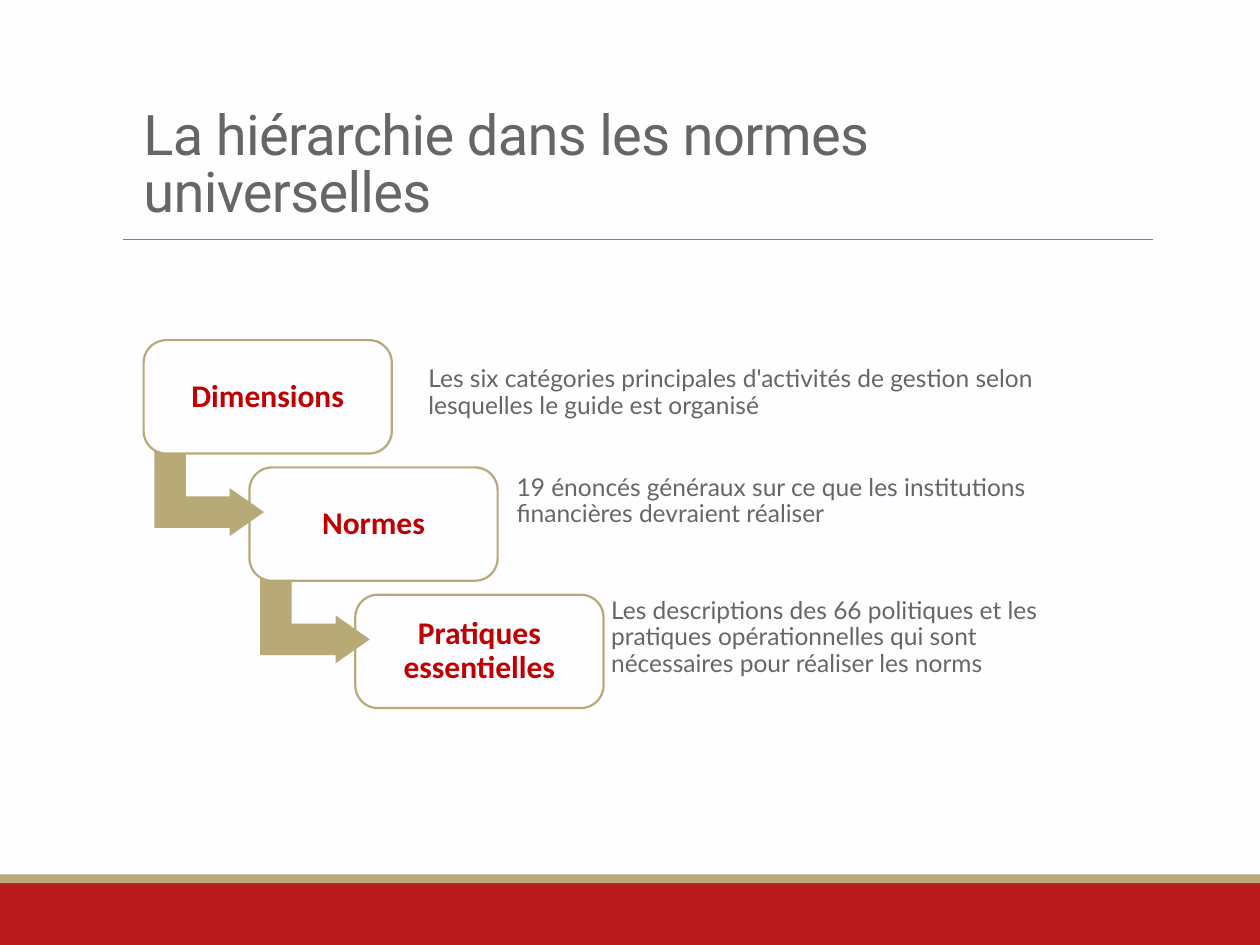
from dataclasses import dataclass

from pptx import Presentation
from pptx.dml.color import RGBColor
from pptx.enum.shapes import MSO_CONNECTOR, MSO_SHAPE
from pptx.enum.text import MSO_ANCHOR, PP_ALIGN
from pptx.oxml.ns import qn
from pptx.util import Inches, Pt


@dataclass(frozen=True)
class Theme:
    """Colours, fonts and type sizes of the slide."""
    background: str = "FEFDFF"
    red: str = "B91A1B"
    gold: str = "B8AA76"
    rule: str = "808080"
    text: str = "666666"
    label: str = "C00000"
    title_font: str = "Roboto"
    body_font: str = "Lato"
    label_font: str = "Calibri"
    title_size: int = 32
    body_size: int = 14
    label_size: int = 18


THEME = Theme()
STEP_LEFT, STEP_TOP = 1.14, 2.7
STEP_RIGHT, STEP_DOWN = 0.84, 1.01
STEPS = [
    ("Dimensions",
     "Les six catégories principales d'activités de gestion selon lesquelles le guide est organisé",
     (3.34, 2.71, 5.26, 0.82)),
    ("Normes",
     "19 énoncés généraux sur ce que les institutions financières devraient réaliser",
     (4.04, 3.57, 4.72, 0.82)),
    ("Pratiques essentielles",
     "Les descriptions des 66 politiques et les pratiques opérationnelles qui sont nécessaires pour réaliser les norms",
     (4.79, 4.5, 3.98, 1.12)),
]


def color(value):
    """Turn a theme colour into an RGB colour."""
    return RGBColor.from_string(value)


def write_text(shape, text, font, size, text_color, bold=False, margin=0.06,
               alignment=PP_ALIGN.LEFT, anchor=MSO_ANCHOR.MIDDLE, line_spacing=0.9):
    """Fill a shape with one formatted paragraph and return its run."""
    frame = shape.text_frame
    frame.text = text
    frame.word_wrap = True
    frame.vertical_anchor = anchor
    frame.margin_left = frame.margin_right = Inches(margin)
    frame.margin_top = frame.margin_bottom = Inches(min(margin, 0.06))
    paragraph = frame.paragraphs[0]
    paragraph.alignment = alignment
    paragraph.line_spacing = line_spacing
    run = paragraph.runs[0]
    run.font.name = font
    run.font.size = Pt(size)
    run.font.bold = bold
    run.font.color.rgb = color(text_color)
    return run


def add_solid(slide, kind, box, fill, line=None):
    """Add a filled preset shape, outlined when a line colour is given."""
    shape = slide.shapes.add_shape(kind, *map(Inches, box))
    shape.shadow.inherit = False
    shape.fill.solid()
    shape.fill.fore_color.rgb = color(fill)
    if line:
        shape.line.color.rgb = color(line)
        shape.line.width = Pt(1.25)
    else:
        shape.line.fill.background()
    return shape


def add_rule(slide, left, right, top):
    """Add the thin horizontal line under the title."""
    rule = slide.shapes.add_connector(
        MSO_CONNECTOR.STRAIGHT, Inches(left), Inches(top), Inches(right), Inches(top))
    rule.line.color.rgb = color(THEME.rule)
    rule.line.width = Pt(0.5)
    properties = rule._element.spPr
    properties.append(properties.makeelement(qn("a:effectLst"), {}))


def add_title(slide, text):
    """Add the slide title with slightly tightened letters."""
    title = slide.shapes.add_textbox(*map(Inches, (1.04, 0.9, 8.25, 0.94)))
    run = write_text(title, text, THEME.title_font, THEME.title_size, THEME.text,
                     margin=0.1, anchor=MSO_ANCHOR.BOTTOM, line_spacing=0.85)
    run.font._element.set("spc", "-40")


def add_description(slide, text, box):
    """Add the explanation beside a step."""
    description = slide.shapes.add_textbox(*map(Inches, box))
    write_text(description, text, THEME.body_font, THEME.body_size, THEME.text)


def add_step(slide, label, left, top):
    """Add the rounded box of a step."""
    box = add_solid(slide, MSO_SHAPE.ROUNDED_RECTANGLE, (left, top, 1.97, 0.9),
                    THEME.background, THEME.gold)
    box.adjustments[0] = 0.2
    write_text(box, label, THEME.label_font, THEME.label_size, THEME.label, bold=True,
               margin=0.1, alignment=PP_ALIGN.CENTER)


def add_step_arrow(slide, left, top):
    """Add the bent arrow from a step at the given place to the next one."""
    arrow = add_solid(slide, MSO_SHAPE.BENT_UP_ARROW,
                      (left + 0.14, top + 0.74, 0.76, 0.87), THEME.gold)
    arrow.rotation = 90
    for index, value in enumerate((0.328, 0.25, 0.358)):
        arrow.adjustments[index] = value


def main():
    """Build the slide and save it."""
    presentation = Presentation()
    presentation.slide_width, presentation.slide_height = Inches(10), Inches(7.5)
    slide = presentation.slides.add_slide(presentation.slide_layouts[6])
    slide.background.fill.solid()
    slide.background.fill.fore_color.rgb = color(THEME.background)

    add_solid(slide, MSO_SHAPE.RECTANGLE, (0, 7, 10, 0.5), THEME.red)
    add_solid(slide, MSO_SHAPE.RECTANGLE, (0, 6.94, 10, 0.07), THEME.gold)
    add_rule(slide, 0.98, 9.15, 1.9)
    add_title(slide, "La hiérarchie dans les normes universelles")

    for _, description, box in STEPS:
        add_description(slide, description, box)
    for index, (label, _, _) in reversed(list(enumerate(STEPS))):
        left, top = STEP_LEFT + index * STEP_RIGHT, STEP_TOP + index * STEP_DOWN
        if index < len(STEPS) - 1:
            add_step_arrow(slide, left, top)
        add_step(slide, label, left, top)

    presentation.save("out.pptx")


if __name__ == "__main__":
    main()
